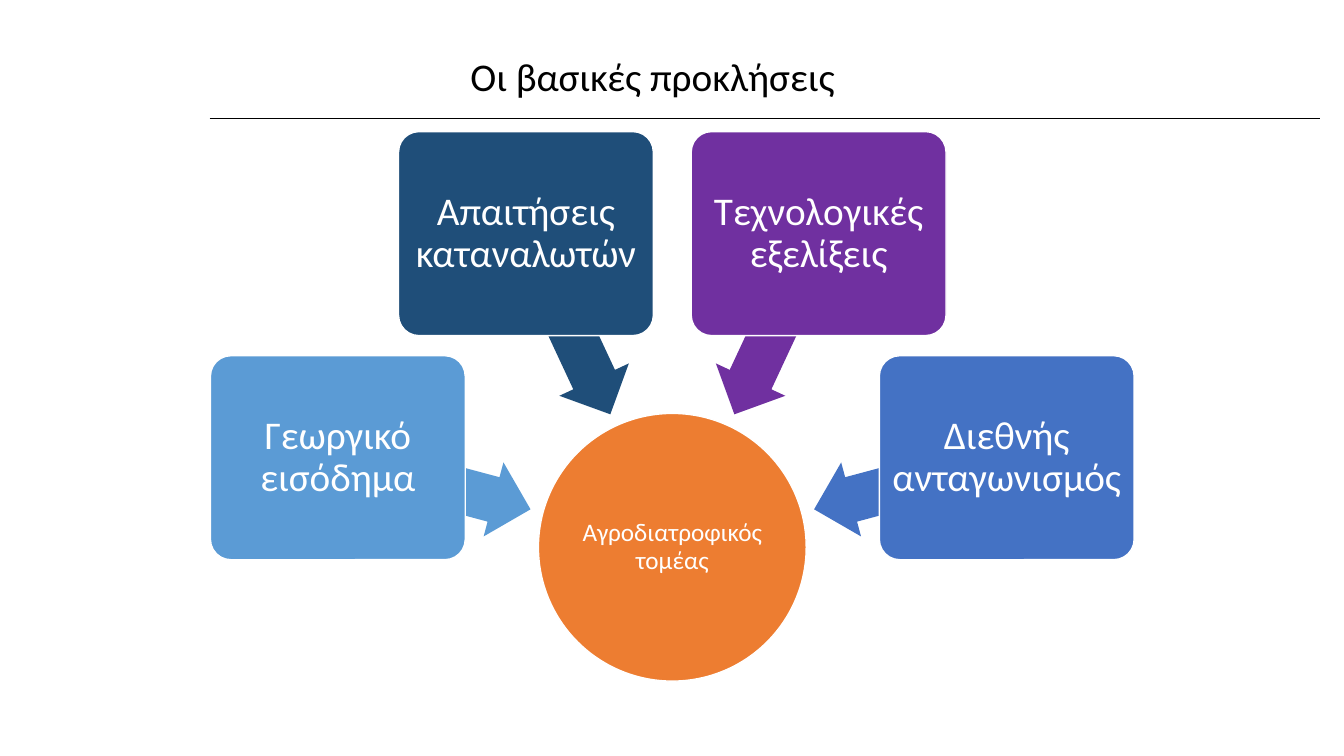
from math import cos, radians, sin

from lxml import etree
from pptx import Presentation
from pptx.dml.color import RGBColor
from pptx.enum.shapes import MSO_CONNECTOR, MSO_SHAPE
from pptx.enum.text import MSO_ANCHOR, PP_ALIGN
from pptx.oxml.ns import qn
from pptx.util import Inches, Pt

ROUND, OVAL = MSO_SHAPE.ROUNDED_RECTANGLE, MSO_SHAPE.OVAL
ARROW, LINE = MSO_SHAPE.LEFT_ARROW, MSO_CONNECTOR.STRAIGHT
MIDDLE, CENTER = MSO_ANCHOR.MIDDLE, PP_ALIGN.CENTER
WIDE, HIGH = 13.33, 7.5
FONT = "Calibri"
BLACK, WHITE, ORANGE = "000000", "FFFFFF", "ED7D31"
TOPICS = [
    ("Γεωργικό εισόδημα", "5B9BD5"),
    ("Απαιτήσεις καταναλωτών", "1F4E79"),
    ("Τεχνολογικές εξελίξεις", "7030A0"),
    ("Διεθνής ανταγωνισμός", "4472C4"),
]


def color(code):
    return RGBColor.from_string(code)


def write(shape, text, size=28, ink=WHITE, inset=0.05):
    frame = shape.text_frame
    frame.word_wrap = True
    frame.vertical_anchor = MIDDLE
    frame.margin_left = frame.margin_right = Inches(inset)
    frame.margin_top = frame.margin_bottom = Inches(inset)
    para = frame.paragraphs[0]
    para.alignment = CENTER
    para.line_spacing = 0.9
    run = para.add_run()
    run.text = text
    run.font.name = FONT
    run.font.size = Pt(size)
    run.font.color.rgb = color(ink)


def draw(slide, kind, mid, size, fill, edge=None, turn=0, adjust=()):
    """Add a filled preset shape centred on the point mid."""
    (x, y), (w, h) = mid, size
    shape = slide.shapes.add_shape(
        kind, Inches(x - w / 2), Inches(y - h / 2), Inches(w), Inches(h))
    shape.shadow.inherit = False
    shape.rotation = turn
    for i, value in enumerate(adjust):
        shape.adjustments[i] = value
    shape.fill.solid()
    shape.fill.fore_color.rgb = color(fill)
    if edge:
        shape.line.color.rgb = color(edge)
        shape.line.width = Pt(1)
    else:
        shape.line.fill.background()
    return shape


def header(slide, x, y, w, h, text):
    """Place the title with a rule that runs on past its box."""
    box = slide.shapes.add_textbox(Inches(x), Inches(y), Inches(w), Inches(h))
    write(box, text, ink=BLACK)
    base = Inches(y + h)
    rule = slide.shapes.add_connector(
        LINE, Inches(x), base, Inches(x + w * 1.254), base)
    rule.line.color.rgb = color(BLACK)
    rule.line.width = Pt(0.5)
    etree.SubElement(rule._element.spPr, qn("a:effectLst"))


def radial(slide, x, y, w, h, core, topics):
    """Fan the topics over a circle at the foot of the box."""
    disc = w * 0.29
    hub = x + w / 2, y + h - disc / 2
    circle = draw(slide, OVAL, hub, (disc, disc), ORANGE, WHITE)
    write(circle, core, size=18, inset=0.01)

    def point(angle, reach):
        turn = radians(angle)
        return hub[0] - reach * cos(turn), hub[1] - reach * sin(turn)

    for i, (text, fill) in enumerate(topics):
        angle = 15 + 50 * i
        draw(slide, ARROW, point(angle, w * 0.267), (w * 0.216, w * 0.083),
             fill, turn=180 + angle, adjust=(0.6, 0.5))
        card = draw(slide, ROUND, point(angle, w * 0.375),
                    (w * 0.276, w * 0.221), fill, WHITE, adjust=(0.1,))
        write(card, text)


def main():
    deck = Presentation()
    deck.slide_width, deck.slide_height = Inches(WIDE), Inches(HIGH)
    slide = deck.slides.add_slide(deck.slide_layouts[6])
    left = WIDE * 0.156
    header(slide, left, HIGH * 0.053, WIDE * 0.659, HIGH * 0.103,
           "Οι βασικές προκλήσεις")
    radial(slide, left + 0.01, HIGH * 0.175, WIDE * 0.687, HIGH * 0.726,
           "Αγροδιατροφικός τομέας", TOPICS)
    deck.save("out.pptx")


if __name__ == "__main__":
    main()
